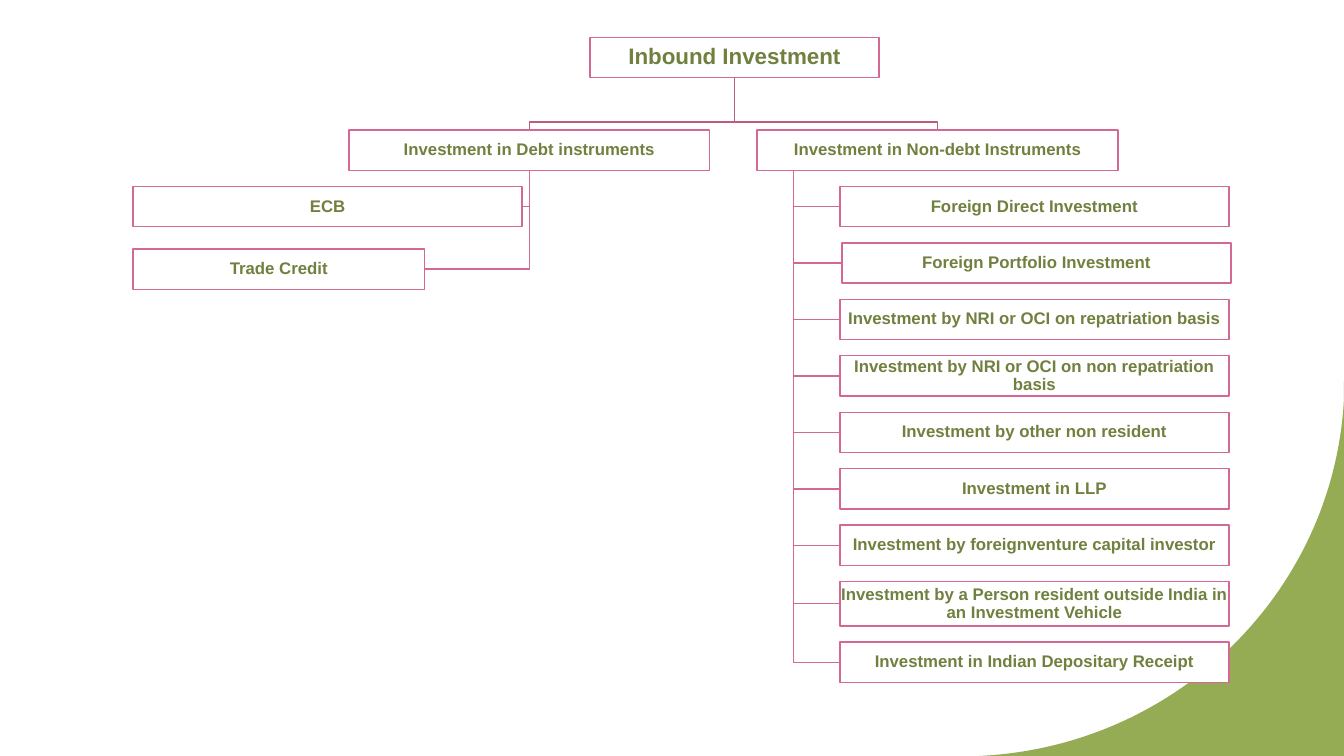
from pptx import Presentation
from pptx.dml.color import RGBColor
from pptx.enum.shapes import MSO_SHAPE
from pptx.enum.text import MSO_ANCHOR, MSO_AUTO_SIZE, PP_ALIGN
from pptx.util import Inches, Pt

RECT = MSO_SHAPE.RECTANGLE
CENTER = PP_ALIGN.CENTER
MIDDLE = MSO_ANCHOR.MIDDLE
NO_AUTOFIT = MSO_AUTO_SIZE.NONE

THEME = {
    "font": "Arial",
    "title_size": 16,
    "box_size": 12,
    "text": RGBColor.from_string("70803F"),
    "box": RGBColor.from_string("FFFFFF"),
    "outline": RGBColor.from_string("D46895"),
    "tree": RGBColor.from_string("BB5C83"),
    "corner": RGBColor.from_string("95AB54"),
}

SLIDE_W, SLIDE_H = 13.33, 7.5
BOX_H, TALL_H, GAP = 0.4, 0.44, 0.16
ROOT_X, ROOT_Y, ROOT_W = 5.85, 0.37, 2.87
HEAD_W, ITEM_W = 3.58, 3.86
HEAD_Y, ITEM_Y, BUS_Y = 1.29, 1.85, 1.21
DEBT_X, NON_DEBT_X = 3.46, 7.51
DEBT_ITEM_X, ITEM_X, TRUNK_X = 1.32, 8.33, 7.87
HEAD_BOTTOM = HEAD_Y + BOX_H

DEBT_ITEMS = [("ECB", ITEM_Y, ITEM_W), ("Trade Credit", 2.47, 2.89)]
NON_DEBT_ITEMS = [
    ("Foreign Direct Investment", ITEM_X, BOX_H),
    ("Foreign Portfolio Investment", ITEM_X + 0.02, BOX_H),
    ("Investment by NRI or OCI on repatriation basis", ITEM_X, BOX_H),
    ("Investment by NRI or OCI on non repatriation basis", ITEM_X, BOX_H),
    ("Investment by other non resident", ITEM_X, BOX_H),
    ("Investment in LLP", ITEM_X, BOX_H),
    ("Investment by foreignventure capital investor", ITEM_X, BOX_H),
    ("Investment by a Person resident outside India in an Investment Vehicle", ITEM_X, TALL_H),
    ("Investment in Indian Depositary Receipt", ITEM_X, BOX_H),
]

prs = Presentation()
prs.slide_width, prs.slide_height = Inches(SLIDE_W), Inches(SLIDE_H)
s = prs.slides.add_slide(prs.slide_layouts[5])


def add_path(points, line=None, fill=None):
    start, *rest = [(Inches(x), Inches(y)) for x, y in points]
    builder = s.shapes.build_freeform(*start)
    builder.add_line_segments(rest, close=fill is not None)
    sp = builder.convert_to_shape()
    sp.shadow.inherit = False
    if fill:
        sp.fill.solid()
        sp.fill.fore_color.rgb = THEME[fill]
        sp.line.fill.background()
    else:
        sp.fill.background()
        sp.line.color.rgb = THEME[line]
        sp.line.width = Pt(1)


def add_box(text, x, y, w, h=BOX_H, sp=None, size=THEME["box_size"]):
    if sp is None:
        sp = s.shapes.add_shape(RECT, 0, 0, 0, 0)
        sp.shadow.inherit = False
    sp.left, sp.top, sp.width, sp.height = (Inches(v) for v in (x, y, w, h))
    sp.fill.solid()
    sp.fill.fore_color.rgb = THEME["box"]
    sp.line.color.rgb = THEME["outline"]
    sp.line.width = Pt(1)
    tf = sp.text_frame
    tf.text = text
    tf.word_wrap = True
    tf.auto_size = NO_AUTOFIT
    tf.vertical_anchor = MIDDLE
    tf.margin_left = tf.margin_right = tf.margin_top = tf.margin_bottom = Inches(0.01)
    p = tf.paragraphs[0]
    p.alignment = CENTER
    p.line_spacing = 0.9
    p.space_before = Pt(0)
    p.space_after = Pt(size * 0.35)
    font = p.runs[0].font
    font.name, font.size, font.bold = THEME["font"], Pt(size), True
    font.color.rgb = THEME["text"]


CURVE = [(9.71, SLIDE_H), (11.67, 7.41), (13.23, 5.87), (SLIDE_W, 3.96)]
WEIGHTS = (1, 3, 3, 1)
STEPS = 60
corner = [(SLIDE_W, 3.78), (SLIDE_W, SLIDE_H), (9.63, SLIDE_H)]
for step in range(STEPS + 1):
    t = step / STEPS
    shares = [w * t**i * (1 - t) ** (3 - i) for i, w in enumerate(WEIGHTS)]
    corner.append(tuple(sum(k * pt[axis] for k, pt in zip(shares, CURVE)) for axis in (0, 1)))
add_path(corner, fill="corner")

root_mid = ROOT_X + ROOT_W / 2
debt_mid = DEBT_X + HEAD_W / 2
add_box("Inbound Investment", ROOT_X, ROOT_Y, ROOT_W, sp=s.shapes.title, size=THEME["title_size"])
for text, x in (("Investment in Debt instruments", DEBT_X), ("Investment in Non-debt Instruments", NON_DEBT_X)):
    mid = x + HEAD_W / 2
    add_path([(root_mid, ROOT_Y + BOX_H), (root_mid, BUS_Y), (mid, BUS_Y), (mid, HEAD_Y)], "tree")
    add_box(text, x, HEAD_Y, HEAD_W)

for text, y, w in DEBT_ITEMS:
    mid = y + BOX_H / 2
    add_path([(debt_mid, HEAD_BOTTOM), (debt_mid, mid), (DEBT_ITEM_X + w, mid)], "outline")
    add_box(text, DEBT_ITEM_X, y, w)

y = ITEM_Y
for text, x, h in NON_DEBT_ITEMS:
    mid = y + h / 2
    add_path([(TRUNK_X, HEAD_BOTTOM), (TRUNK_X, mid), (x, mid)], "outline")
    add_box(text, x, y, ITEM_W, h)
    y += h + GAP

prs.save("out.pptx")
